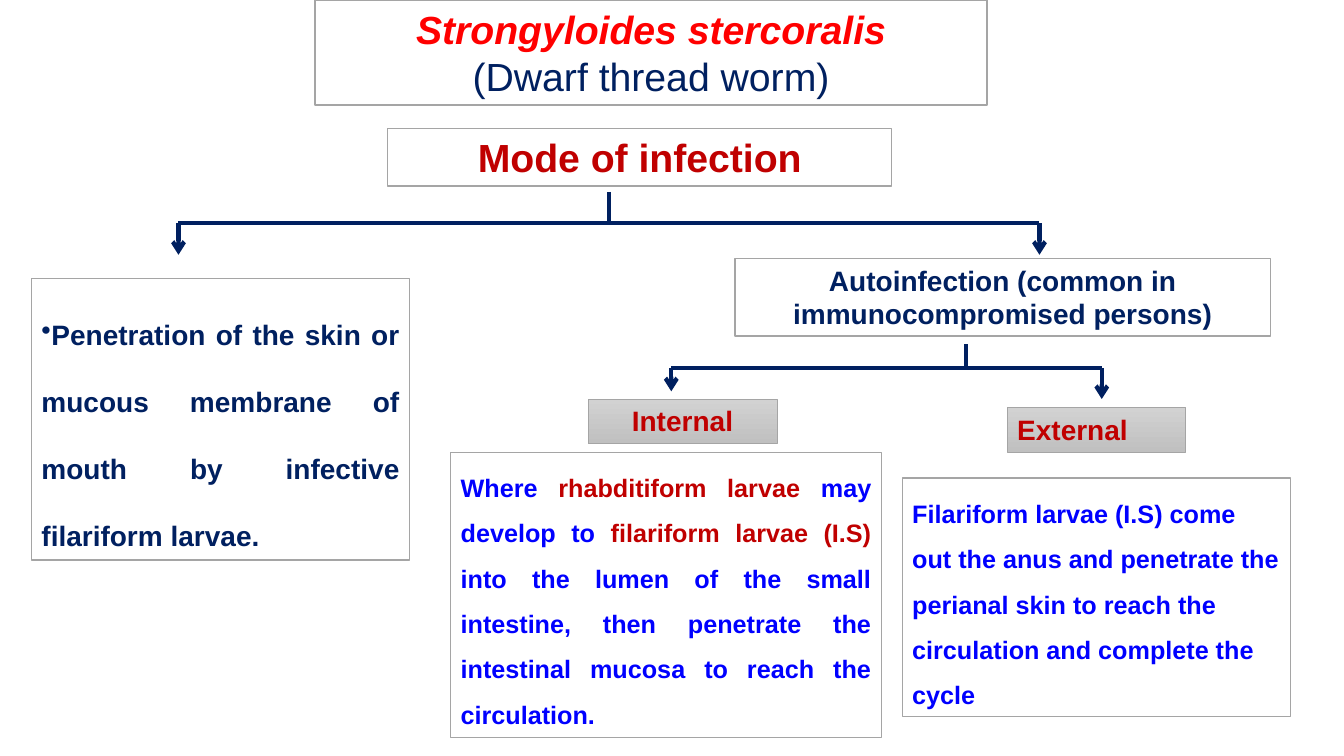
from dataclasses import dataclass

from lxml import etree
from pptx import Presentation
from pptx.dml.color import RGBColor
from pptx.enum import shapes, text
from pptx.oxml import ns
from pptx.util import Pt

NAVY = RGBColor(0x00, 0x20, 0x60)
CRIMSON = RGBColor(0xC0, 0x00, 0x00)
RED = RGBColor(0xFF, 0x00, 0x00)
BLUE = RGBColor(0x00, 0x00, 0xFF)
GREY = RGBColor(0xA5, 0xA5, 0xA5)
WHITE = RGBColor(0xFF, 0xFF, 0xFF)
SHADES = (RGBColor(0xD2, 0xD2, 0xD2), RGBColor(0xC0, 0xC0, 0xC0))
LEFT, CENTER, JUSTIFY = text.PP_ALIGN.LEFT, text.PP_ALIGN.CENTER, text.PP_ALIGN.JUSTIFY


@dataclass
class Box:
    frame: tuple[float, float, float, float]
    phrases: list[tuple[str, RGBColor]]
    size: float
    align: text.PP_ALIGN = CENTER
    spacing: float = 1.0
    bullet: str = ""
    shaded: bool = False


@dataclass
class Fork:
    stem_x: float
    top: float
    bar_y: float
    tips: list[tuple[float, float]]


BOXES = [
    Box((277, 92, 360, 41), [("Mode of infection", CRIMSON)], 28),
    Box((22.5, 199, 270, 201),
        [("Penetration of the skin or mucous membrane of mouth by infective "
          "filariform larvae.", NAVY)], 20, JUSTIFY, 2.0, "•"),
    Box((525, 184.5, 382.5, 55.5),
        [("Autoinfection (common in immunocompromised persons)", NAVY)], 20),
    Box((420, 285, 135, 32), [("Internal", CRIMSON)], 20, shaded=True),
    Box((719.5, 291, 127.5, 32), [("External", CRIMSON)], 20, LEFT, shaded=True),
    Box((322, 323, 307.5, 204),
        [("Where ", BLUE), ("rhabditiform larvae", CRIMSON), (" may develop to ", BLUE),
         ("filariform larvae (I.S) ", CRIMSON),
         ("into the lumen of the small intestine, then penetrate the intestinal "
          "mucosa to reach the circulation.", BLUE)], 18, JUSTIFY, 1.5),
    Box((644.5, 341.5, 277.5, 170.5),
        [("Filariform larvae (I.S) come out the anus and penetrate the perianal skin "
          "to reach the circulation and complete the cycle", BLUE)], 18, LEFT, 1.5),
]

FORKS = [
    Fork(435, 137, 159.5, [(127.5, 182), (742.5, 182)]),
    Fork(690, 246, 263, [(479.5, 279.5), (787, 285)]),
]


def write(paragraph, words: str, *, size: float, color: RGBColor,
          bold: bool = True, italic: bool = False) -> None:
    run = paragraph.add_run()
    run.text = words
    font = run.font
    font.name, font.size, font.bold, font.italic = "Arial", Pt(size), bold, italic
    font.color.rgb = color


def frame_panel(panel, shaded: bool = False) -> None:
    if shaded:
        panel.fill.gradient()
        panel.fill.gradient_angle = 270
        for stop, shade in zip(panel.fill.gradient_stops, SHADES):
            stop.color.rgb = shade
    else:
        panel.fill.solid()
        panel.fill.fore_color.rgb = WHITE
    panel.line.color.rgb = GREY
    panel.line.width = Pt(0.5 if shaded else 1)
    panel.text_frame.word_wrap = True
    panel.text_frame.auto_size = text.MSO_AUTO_SIZE.SHAPE_TO_FIT_TEXT
    panel.text_frame.vertical_anchor = text.MSO_ANCHOR.TOP


def draw_title(slide) -> None:
    title = slide.shapes.title
    title.left, title.top, title.width, title.height = Pt(225), Pt(0), Pt(480), Pt(75)
    frame_panel(title)
    species = title.text_frame.paragraphs[0]
    common_name = title.text_frame.add_paragraph()
    write(species, "Strongyloides stercoralis", size=28, color=RED, italic=True)
    write(common_name, "(Dwarf thread worm)", size=28, color=NAVY, bold=False)
    for paragraph in (species, common_name):
        paragraph.alignment = CENTER


def draw_box(slide, box: Box) -> None:
    panel = slide.shapes.add_shape(shapes.MSO_SHAPE.RECTANGLE, *map(Pt, box.frame))
    panel.shadow.inherit = False
    frame_panel(panel, box.shaded)
    paragraph = panel.text_frame.paragraphs[0]
    paragraph.alignment = box.align
    paragraph.line_spacing = box.spacing
    if box.bullet:
        properties = paragraph._p.get_or_add_pPr()
        etree.SubElement(properties, ns.qn("a:buChar")).set("char", box.bullet)
    for words, color in box.phrases:
        write(paragraph, words, size=box.size, color=color)


def draw_line(slide, start: tuple[float, float], end: tuple[float, float],
              arrow: bool = False) -> None:
    link = slide.shapes.add_connector(
        shapes.MSO_CONNECTOR.STRAIGHT, *map(Pt, (*start, *end)))
    link.line.color.rgb = NAVY
    link.line.width = Pt(3)
    properties = link._element.spPr
    if arrow:
        outline = properties.find(ns.qn("a:ln"))
        etree.SubElement(outline, ns.qn("a:tailEnd")).set("type", "arrow")
    etree.SubElement(properties, ns.qn("a:effectLst"))


def draw_fork(slide, fork: Fork) -> None:
    junction = (fork.stem_x, fork.bar_y)
    draw_line(slide, (fork.stem_x, fork.top), junction)
    for tip in fork.tips:
        corner = (tip[0], fork.bar_y)
        draw_line(slide, junction, corner)
        draw_line(slide, corner, tip, arrow=True)


def main() -> None:
    deck = Presentation()
    deck.slide_width, deck.slide_height = Pt(960), Pt(540)
    slide = deck.slides.add_slide(deck.slide_layouts[5])
    draw_title(slide)
    for box in BOXES:
        draw_box(slide, box)
    for fork in FORKS:
        draw_fork(slide, fork)
    deck.save("out.pptx")


if __name__ == "__main__":
    main()
